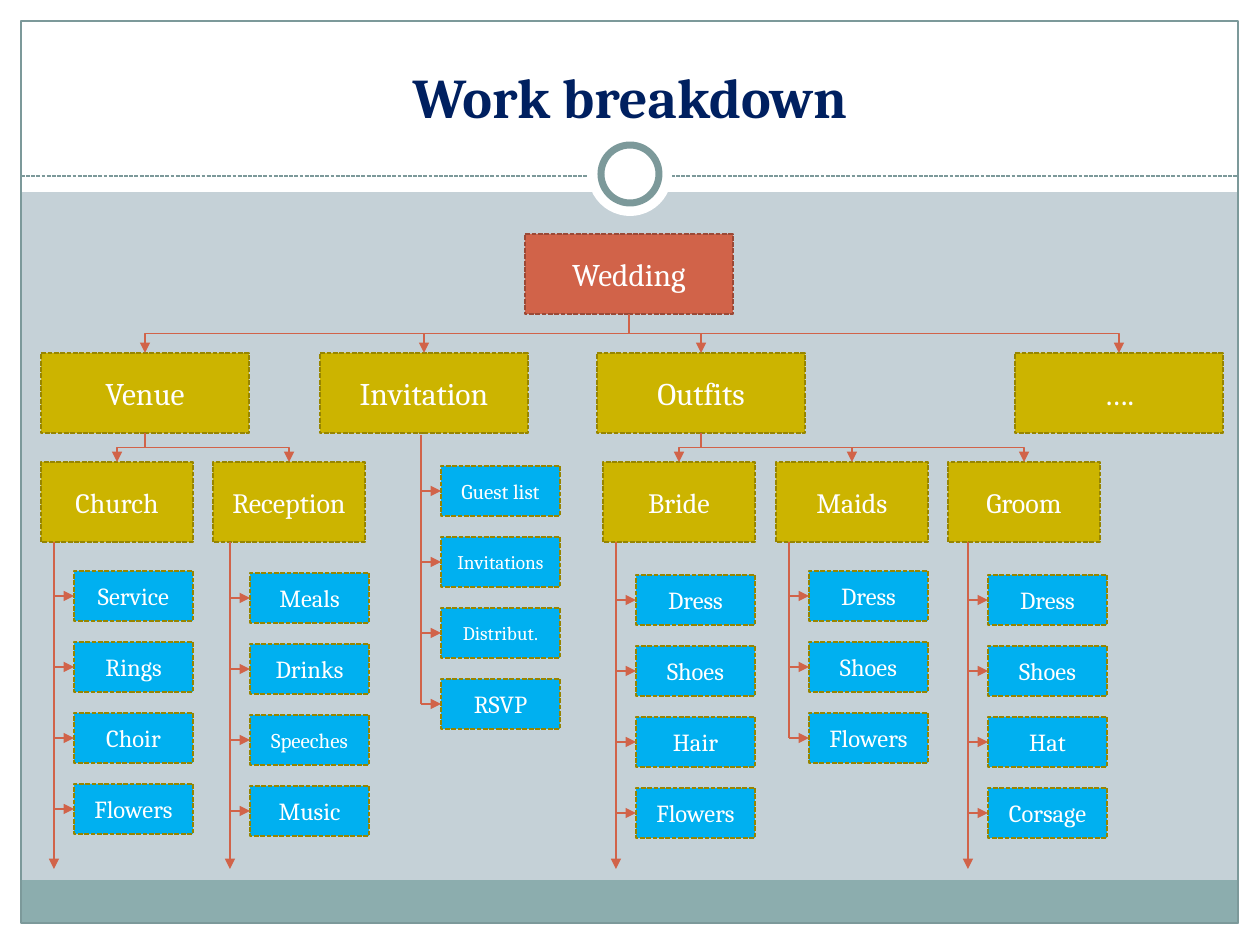
from lxml import etree
from pptx import Presentation
from pptx import util as u
from pptx.dml.color import RGBColor
from pptx.enum import dml, shapes, text
from pptx.oxml.ns import qn

PX_PER_INCH = 126
FONT = "Cambria"
WHITE, NAVY, TEAL, PALE, GREY = "FFFFFF", "002060", "8CADAE", "C5D1D7", "7C999A"
RUST, RUST_EDGE, OLIVE, OLIVE_EDGE, BLUE = "D16349", "9B4936", "CCB400", "978500", "00B0F0"
BOX_HEIGHT, GROUP_WIDTH, SUBGROUP_WIDTH = 80, 208, 152
GROUP_TOP, SUBGROUP_TOP = 353, 462
ITEM_WIDTH, ITEM_HEIGHT, ITEM_PITCH, STUB = 119, 50, 71, 20
STEM_END = 869
SMALL_SIZES = {"Guest list": 12, "Speeches": 12, "Invitations": 11, "Distribut.": 11}

# name, left, subgroups (name, left)
GROUPS = [
    ("Venue", 41, [("Church", 41), ("Reception", 213)]),
    ("Invitation", 320, []),
    ("Outfits", 597, [("Bride", 603), ("Maids", 776), ("Groom", 948)]),
    ("….", 1015, []),
]
# stem x, stem top, first item top, stem runs on below the items, items
LISTS = [
    (54, 542, 571, True, ["Service", "Rings", "Choir", "Flowers"]),
    (230, 542, 573, True, ["Meals", "Drinks", "Speeches", "Music"]),
    (421, 435, 466, False, ["Guest list", "Invitations", "Distribut.", "RSVP"]),
    (616, 542, 575, True, ["Dress", "Shoes", "Hair", "Flowers"]),
    (789, 542, 571, False, ["Dress", "Shoes", "Flowers"]),
    (968, 542, 575, True, ["Dress", "Shoes", "Hat", "Corsage"]),
]


def px(length):
    return u.Inches(length / PX_PER_INCH)


def color(value):
    return RGBColor.from_string(value)


def style_line(line, value, width, dashed=False):
    line.color.rgb = color(value)
    line.width = u.Pt(width)
    if dashed:
        line.dash_style = dml.MSO_LINE.SQUARE_DOT


def add_plain(slide, left, top, width, height, fill=None, edge=None, edge_width=0.75,
              kind=shapes.MSO_SHAPE.RECTANGLE):
    shape = slide.shapes.add_shape(kind, px(left), px(top), px(width), px(height))
    shape.shadow.inherit = False
    if fill:
        shape.fill.solid()
        shape.fill.fore_color.rgb = color(fill)
    else:
        shape.fill.background()
    if edge:
        style_line(shape.line, edge, edge_width)
    else:
        shape.line.fill.background()
    return shape


def write(shape, words, size, value, anchor, bold=False):
    frame = shape.text_frame
    frame.word_wrap = True
    frame.vertical_anchor = anchor
    para = frame.paragraphs[0]
    para.alignment = text.PP_ALIGN.CENTER
    span = para.add_run()
    span.text = words
    span.font.name = FONT
    span.font.size = u.Pt(size)
    span.font.bold = bold
    span.font.color.rgb = color(value)


def add_box(slide, words, left, top, width, height, size, fill, edge=OLIVE_EDGE):
    box = add_plain(slide, left, top, width, height, fill)
    style_line(box.line, edge, 0.9, dashed=True)
    write(box, words, size, WHITE, text.MSO_ANCHOR.MIDDLE)
    return box


def finish_connector(connector, value=RUST, arrow=True, dashed=False):
    style_line(connector.line, value, 0.75, dashed)
    properties = connector.element.spPr
    if arrow:
        etree.SubElement(properties.find(qn("a:ln")), qn("a:tailEnd"), type="triangle")
    etree.SubElement(properties, qn("a:effectLst"))


def add_line(slide, x1, y1, x2, y2, target=None, **style):
    """Draw a straight line, joined to the left side of target if there is one."""
    line = slide.shapes.add_connector(
        shapes.MSO_CONNECTOR.STRAIGHT, px(x1), px(y1), px(x2), px(y2))
    if target is not None:
        line.end_connect(target, 1)
    finish_connector(line, **style)


def add_branch(slide, parent, child):
    """Draw an elbow from the bottom of parent down to the top of child."""
    x1, y1 = parent.left + parent.width // 2, parent.top + parent.height
    x2, y2 = child.left + child.width // 2, child.top
    branch = slide.shapes.add_connector(shapes.MSO_CONNECTOR.ELBOW, x1, y1, x2, y2)
    branch.begin_connect(parent, 2)
    branch.end_connect(child, 0)
    # The elbow starts out horizontal, so it is turned a quarter about its centre.
    frame = branch.element.spPr.find(qn("a:xfrm"))
    frame.attrib.clear()
    if x2 > x1:
        frame.set("rot", "16200000")
        frame.set("flipH", "1")
    else:
        frame.set("rot", "5400000")
    branch.width, branch.height = y2 - y1, abs(x2 - x1)
    branch.left = (x1 + x2 - branch.width) // 2
    branch.top = (y1 + y2 - branch.height) // 2
    finish_connector(branch)


def add_backdrop(slide):
    slide.background.fill.solid()
    slide.background.fill.fore_color.rgb = color(PALE)
    for margin in [(0, 924, 1260, 21), (0, 0, 1260, 192), (0, 0, 21, 945), (1239, 0, 21, 945)]:
        add_plain(slide, *margin, fill=WHITE)
    add_plain(slide, 21, 880, 1217, 43, TEAL)
    add_plain(slide, 21, 21, 1217, 902, edge=GREY)
    add_line(slide, 21, 176, 1238, 176, value=GREY, arrow=False, dashed=True)
    oval = shapes.MSO_SHAPE.OVAL
    add_plain(slide, 588, 132, 84, 84, WHITE, kind=oval)
    add_plain(slide, 601, 145, 58, 58, WHITE, GREY, 4, kind=oval)


def add_title(slide):
    title = slide.shapes.add_textbox(px(42), px(32), px(1176), px(104))
    write(title, "Work breakdown", 32, NAVY, text.MSO_ANCHOR.BOTTOM, bold=True)


def add_tree(slide):
    root = add_box(slide, "Wedding", 525, 234, GROUP_WIDTH, BOX_HEIGHT, 18, RUST, RUST_EDGE)
    for name, left, subgroups in GROUPS:
        group = add_box(slide, name, left, GROUP_TOP, GROUP_WIDTH, BOX_HEIGHT, 18, OLIVE)
        add_branch(slide, root, group)
        for subname, subleft in subgroups:
            subgroup = add_box(slide, subname, subleft, SUBGROUP_TOP,
                               SUBGROUP_WIDTH, BOX_HEIGHT, 16, OLIVE)
            add_branch(slide, group, subgroup)


def add_list(slide, stem, stem_top, first_top, runs_on, items):
    """Draw a stem with one item box hanging off each stub."""
    for row, item in enumerate(items):
        top = first_top + row * ITEM_PITCH
        middle = top + ITEM_HEIGHT // 2
        box = add_box(slide, item, stem + STUB, top, ITEM_WIDTH, ITEM_HEIGHT,
                      SMALL_SIZES.get(item, 14), BLUE)
        add_line(slide, stem, middle, stem + STUB, middle, target=box)
    add_line(slide, stem, stem_top, stem, STEM_END if runs_on else middle, arrow=runs_on)


def main():
    deck = Presentation()
    deck.slide_width, deck.slide_height = px(1260), px(945)
    slide = deck.slides.add_slide(deck.slide_layouts[6])
    add_backdrop(slide)
    add_title(slide)
    add_tree(slide)
    for entry in LISTS:
        add_list(slide, *entry)
    deck.save("out.pptx")


if __name__ == "__main__":
    main()
